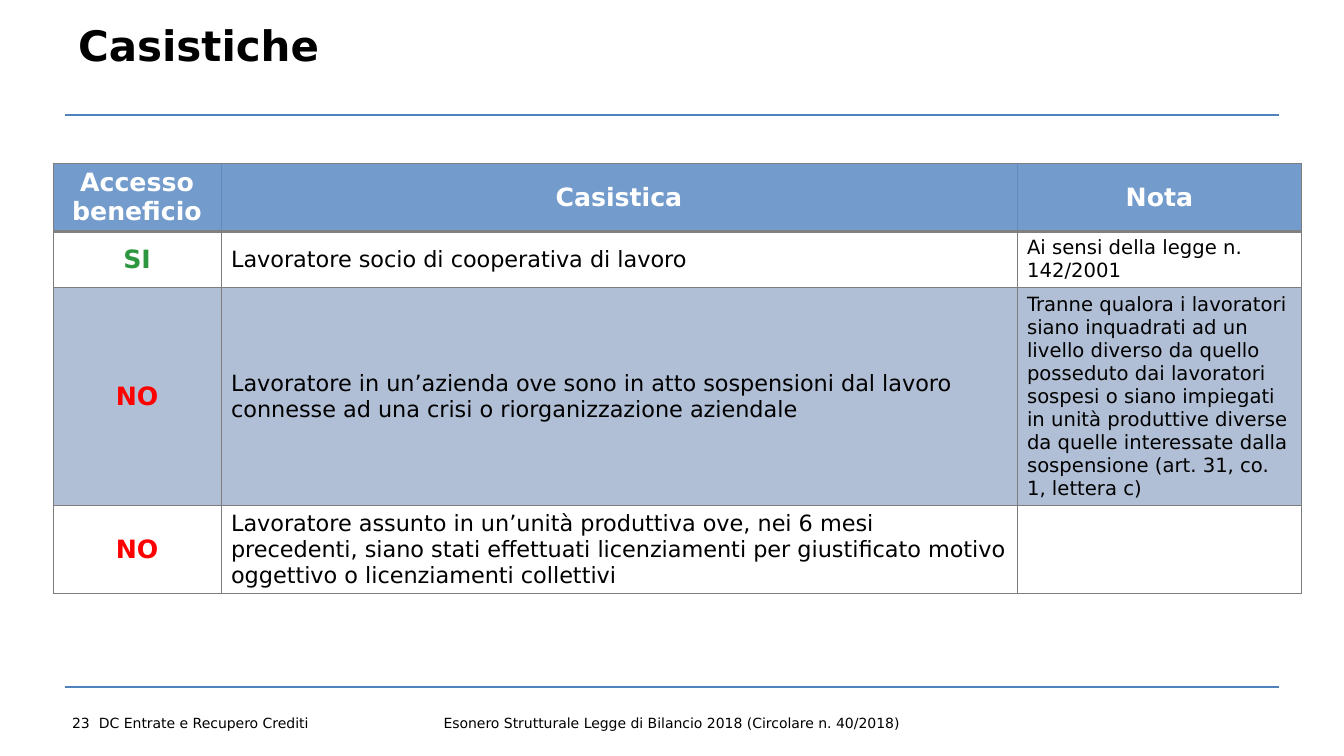
from lxml import etree
from pptx import Presentation
from pptx.dml.color import RGBColor
from pptx.enum.shapes import MSO_CONNECTOR
from pptx.enum.text import MSO_ANCHOR, PP_ALIGN
from pptx.oxml.ns import qn
from pptx.util import Emu, Pt

LEFT, CENTER = PP_ALIGN.LEFT, PP_ALIGN.CENTER
TOP, MIDDLE = MSO_ANCHOR.TOP, MSO_ANCHOR.MIDDLE
STRAIGHT = MSO_CONNECTOR.STRAIGHT

FONT = "DejaVu Sans"
BLACK = RGBColor(0x00, 0x00, 0x00)
WHITE = RGBColor(0xFF, 0xFF, 0xFF)
RULE_BLUE = RGBColor(0x4F, 0x81, 0xBD)
HEADER_BLUE = RGBColor(0x73, 0x9B, 0xCB)
HEADER_DIVIDER = RGBColor(0x62, 0x89, 0xB9)
BAND_BLUE = RGBColor(0xB0, 0xBF, 0xD5)
GRID_GREY = RGBColor(0x7D, 0x7D, 0x7D)
HEADER_EDGE = RGBColor(0x80, 0x80, 0x80)
YES_GREEN = RGBColor(0x2C, 0x97, 0x3E)
NO_RED = RGBColor(0xFF, 0x00, 0x00)

HEADINGS = ("Accesso beneficio", "Casistica", "Nota")
CASES = (
    ("SI", "Lavoratore socio di cooperativa di lavoro",
     "Ai sensi della legge n. 142/2001"),
    ("NO", "Lavoratore in un’azienda ove sono in atto sospensioni dal lavoro "
     "connesse ad una crisi o riorganizzazione aziendale",
     "Tranne qualora i lavoratori siano inquadrati ad un livello diverso da "
     "quello posseduto dai lavoratori sospesi o siano impiegati in unità "
     "produttive diverse da quelle interessate dalla sospensione "
     "(art. 31, co. 1, lettera c)"),
    ("NO", "Lavoratore assunto in un’unità produttiva ove, nei 6 mesi "
     "precedenti, siano stati effettuati licenziamenti per giustificato "
     "motivo oggettivo o licenziamenti collettivi", ""),
)
COLUMN_WIDTHS = (168, 796, 285)
ROW_HEIGHTS = (68, 56, 218, 87)
COLUMN_SIZES = (18, 16, 14)


def px(count):
    return Emu(round(count * 914400 / 100.8))


def write(paragraph, text, size, color=BLACK, bold=False, align=LEFT):
    paragraph.alignment = align
    if not text:
        paragraph.font.size = Pt(size)
        return
    run = paragraph.add_run()
    run.text = text
    run.font.name = FONT
    run.font.size = Pt(size)
    run.font.bold = bold
    run.font.color.rgb = color


def add_rule(slide, left, top, width):
    rule = slide.shapes.add_connector(
        STRAIGHT, px(left), px(top), px(left + width), px(top))
    rule.line.color.rgb = RULE_BLUE
    rule.line.width = Pt(1.5)
    etree.SubElement(rule._element.spPr, qn("a:effectLst"))


def add_title(slide, left, top, width, height):
    title = slide.shapes.title
    title.left, title.top = px(left), px(top)
    title.width, title.height = px(width), px(height)
    title.text_frame.vertical_anchor = TOP
    paragraph = title.text_frame.paragraphs[0]
    paragraph.line_spacing = 0.85
    write(paragraph, "Casistiche", 30, bold=True)


def add_footer(slide, left, top, height):
    # Offset, width, side inset, alignment and wording of each part
    parts = (
        (0, 28, 0, CENTER, "23"),
        (28, 310, 4, LEFT, "DC Entrate e Recupero Crediti"),
        (366, 477, 4, CENTER,
         "Esonero Strutturale Legge di Bilancio 2018 (Circolare n. 40/2018)"),
    )
    for offset, width, inset, align, text in parts:
        box = slide.shapes.add_textbox(
            px(left + offset), px(top), px(width), px(height))
        frame = box.text_frame
        frame.word_wrap = True
        frame.vertical_anchor = MIDDLE
        frame.margin_left = frame.margin_right = px(inset)
        frame.margin_top = frame.margin_bottom = 0
        write(frame.paragraphs[0], text, 10, align=align)


def set_borders(cell, borders):
    """Borders map a side to its colour and width in points."""
    properties = cell._tc.get_or_add_tcPr()
    for index, side in enumerate(("L", "R", "T", "B")):
        color, width = borders[side]
        line = etree.Element(qn(f"a:ln{side}"), w=str(Pt(width)))
        fill = etree.SubElement(line, qn("a:solidFill"))
        etree.SubElement(fill, qn("a:srgbClr"), val=str(color))
        properties.insert(index, line)


def format_cell(cell, row, column, text):
    header = row == 0
    borders = dict.fromkeys("LRTB", (GRID_GREY, 0.75))
    if header:
        fill, size, color = HEADER_BLUE, 18, WHITE
        borders["B"] = (HEADER_EDGE, 2)
        if column > 0:
            borders["L"] = (HEADER_DIVIDER, 0.75)
        if column < len(HEADINGS) - 1:
            borders["R"] = (HEADER_DIVIDER, 0.75)
    else:
        fill = BAND_BLUE if row == 2 else WHITE
        size = COLUMN_SIZES[column]
        color = {"SI": YES_GREEN, "NO": NO_RED}.get(text, BLACK)
        if row == 1:
            borders["T"] = (HEADER_EDGE, 2)
    strong = header or column == 0
    cell.fill.solid()
    cell.fill.fore_color.rgb = fill
    cell.vertical_anchor = MIDDLE
    write(cell.text_frame.paragraphs[0], text, size, color, strong,
          CENTER if strong else LEFT)
    set_borders(cell, borders)


def add_case_table(slide, left, top):
    rows = (HEADINGS, *CASES)
    table = slide.shapes.add_table(
        len(rows), len(HEADINGS), px(left), px(top),
        px(sum(COLUMN_WIDTHS)), px(sum(ROW_HEIGHTS))).table
    for column, width in zip(table.columns, COLUMN_WIDTHS):
        column.width = px(width)
    for row, height in zip(table.rows, ROW_HEIGHTS):
        row.height = px(height)
    for row, texts in enumerate(rows):
        for column, text in enumerate(texts):
            format_cell(table.cell(row, column), row, column, text)


def main():
    presentation = Presentation()
    presentation.slide_width, presentation.slide_height = px(1344), px(756)
    slide = presentation.slides.add_slide(presentation.slide_layouts[5])

    # Rules above and below the content
    for top in (115, 687):
        add_rule(slide, 65, top, 1214)

    add_title(slide, 68, 22, 1211, 93)
    add_case_table(slide, 53, 163)
    add_footer(slide, 67, 711, 24)
    presentation.save("out.pptx")


if __name__ == "__main__":
    main()
